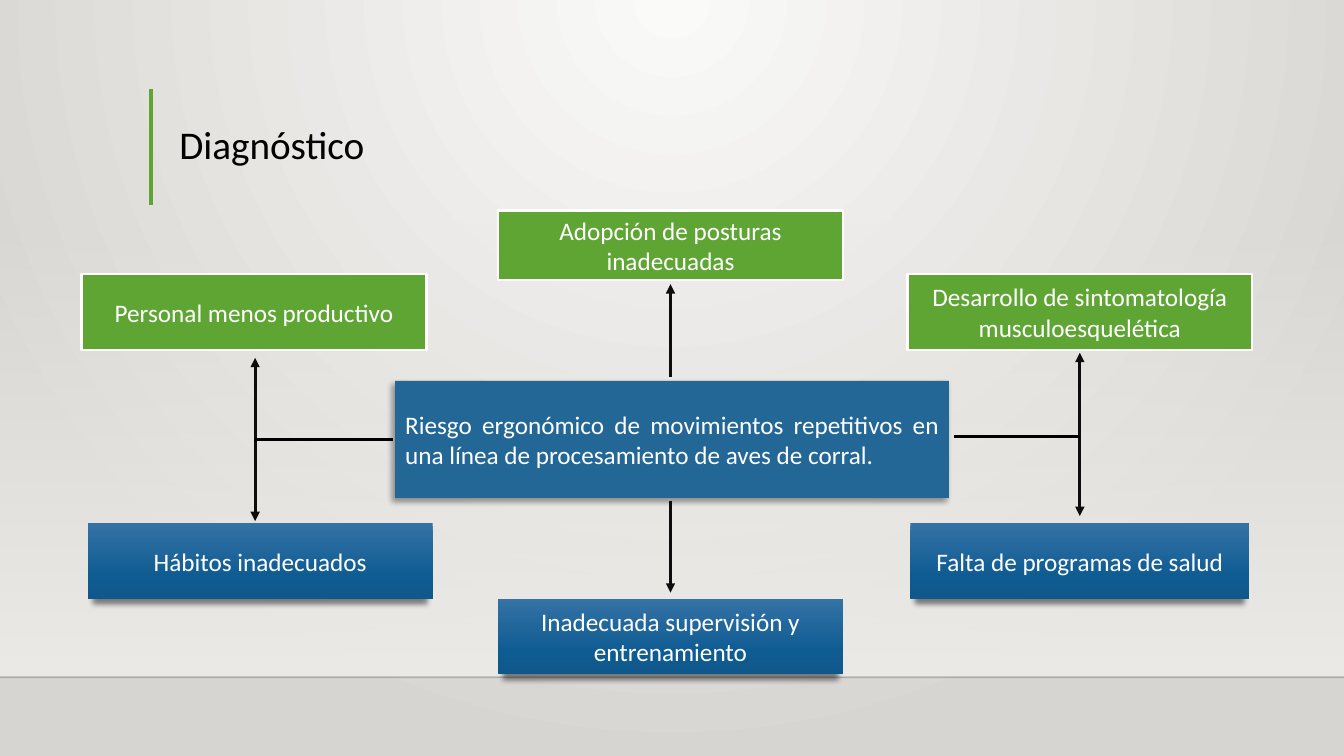
from pptx import Presentation
from pptx.dml.color import RGBColor as RGB
from pptx.enum.shapes import MSO_CONNECTOR as LINK, MSO_SHAPE as SHAPE
from pptx.enum.text import MSO_ANCHOR as ANCHOR, PP_ALIGN as ALIGN
from pptx.oxml import parse_xml
from pptx.oxml.ns import nsdecls, qn
from pptx.util import Inches, Pt

HUE = {"green": "5FA534", "blue": "236797", "white": "FFFFFF", "black": "000000",
       "ink": "0D0D0D", "rule": "000001", "light": "FAFAF9", "edge": "D7D5D2",
       "haze": "EDEBE7", "top": "3572A5", "mid": "0F5C93", "low": "0F588B"}
DOWN = '<a:lin ang="5400000" scaled="0"/>'
GLOW = '<a:path path="circle"><a:fillToRect l="43000" t="0" r="43000" b="100000"/></a:path>'
DEEP = [(0, "top", 100), (69, "mid", 100), (100, "low", 100)]
LEFT, MID, RIGHT = 2.53, 6.65, 10.71


def tint(name, alpha):
    """Return the XML of a colour with the given opacity in percent."""
    return f'<a:srgbClr val="{HUE[name]}"><a:alpha val="{alpha * 1000}"/></a:srgbClr>'


def blend(owner, stops, way):
    """Replace the solid fill of an element with a gradient."""
    marks = "".join(f'<a:gs pos="{pos * 1000}">{tint(name, alpha)}</a:gs>'
                    for pos, name, alpha in stops)
    grad = parse_xml(f'<a:gradFill {nsdecls("a")} rotWithShape="1">'
                     f'<a:gsLst>{marks}</a:gsLst>{way}</a:gradFill>')
    owner.replace(owner.find(qn("a:solidFill")), grad)


def shade(shape, alpha, blur, dist, angle, scale=100):
    """Give a shape an outer shadow."""
    shape.element.spPr.find(qn("a:effectLst")).append(parse_xml(
        f'<a:outerShdw {nsdecls("a")} blurRad="{Pt(blur)}" dist="{Pt(dist)}" '
        f'dir="{angle * 60000}" sx="{scale * 1000}" algn="ctr" rotWithShape="0">'
        f'{tint("black", alpha)}</a:outerShdw>'))


def block(slide, box, fill, edge=None):
    """Draw a flat rectangle in the given box."""
    shape = slide.shapes.add_shape(SHAPE.RECTANGLE, *map(Inches, box))
    shape.fill.solid()
    shape.fill.fore_color.rgb = RGB.from_string(HUE[fill])
    if edge:
        shape.line.color.rgb = RGB.from_string(HUE[edge])
        shape.line.width = Pt(1.75)
    else:
        shape.line.fill.background()
    shape.shadow.inherit = False
    return shape


def write(shape, text, size, hue, align):
    """Set one paragraph, centred vertically, in a shape."""
    frame = shape.text_frame
    frame.word_wrap = True
    frame.vertical_anchor = ANCHOR.MIDDLE
    para = frame.paragraphs[0]
    para.text = text
    para.alignment = align
    para.font.name = "Calibri"
    para.font.size = Pt(size)
    para.font.color.rgb = RGB.from_string(HUE[hue])
    return para


def link(slide, start, end, hue="ink", width=2.25, ends=()):
    """Draw a straight line with optional arrowheads."""
    line = slide.shapes.add_connector(LINK.STRAIGHT, *map(Inches, (*start, *end)))
    line.line.color.rgb = RGB.from_string(HUE[hue])
    line.line.width = Pt(width)
    props = line.element.spPr
    for end in ends:
        props.find(qn("a:ln")).append(
            parse_xml(f'<a:{end} {nsdecls("a")} type="triangle"/>'))
    props.append(parse_xml(f'<a:effectLst {nsdecls("a")}/>'))
    return line


def scene(slide, wide):
    """Paint the backdrop and the floor line."""
    slide.background.fill.solid()
    blend(slide.element.find(".//" + qn("p:bgPr")),
          [(0, "light", 100), (100, "edge", 100)], GLOW)
    haze = block(slide, (0, 2.2, wide, 4.5), "haze")
    blend(haze.element.spPr, [(0, "haze", 0), (100, "haze", 100)], DOWN)
    floor = link(slide, (0, 6.72), (wide, 6.72), "rule", 1)
    color = floor.element.spPr.find(".//" + qn("a:srgbClr"))
    color.append(parse_xml(f'<a:alpha {nsdecls("a")} val="20000"/>'))


def head(slide, box, text):
    """Write the title with a green bar at its left."""
    x, y, _, h = box
    link(slide, (x - 0.18, y), (x - 0.18, y + h), "green", 3)
    title = slide.shapes.add_textbox(*map(Inches, box))
    write(title, text, 28, "black", ALIGN.LEFT).line_spacing = 0.9


def core(slide, box, text):
    """Draw the central problem."""
    shape = block(slide, box, "blue")
    shade(shape, 40, 4, 3, 135)
    write(shape, text, 18, "white", ALIGN.JUSTIFY)


def effect(slide, box, text):
    """Draw a green box with a white edge."""
    write(block(slide, box, "green", "white"), text, 18, "white", ALIGN.CENTER)


def cause(slide, box, text):
    """Draw a shaded blue box."""
    shape = block(slide, box, "mid")
    blend(shape.element.spPr, DEEP, DOWN)
    shade(shape, 48, 4, 4, 90, 97)
    write(shape, text, 18, "white", ALIGN.CENTER)


def links(slide):
    """Join the problem to its effects and causes."""
    both = ("headEnd", "tailEnd")
    for start, end in ((3.74, 2.82), (4.97, 5.88)):
        link(slide, (MID, start), (MID, end), ends=both[1:])
    for x, y, side, bar in ((LEFT, 3.55, 3.9, 4.36), (RIGHT, 3.5, 9.46, 4.33)):
        link(slide, (x, y), (x, y + 1.62), ends=both)
        link(slide, (x, bar), (side, bar), "black")


def main():
    """Build the slide and save it."""
    deck = Presentation()
    deck.slide_width, deck.slide_height = Inches(13.33), Inches(7.5)
    slide = deck.slides.add_slide(deck.slide_layouts[6])
    scene(slide, 13.33)
    head(slide, (1.68, 0.88, 10.41, 1.15), "Diagnóstico")
    core(slide, (3.92, 3.78, 5.49, 1.16),
         "Riesgo ergonómico de movimientos repetitivos en una línea de "
         "procesamiento de aves de corral.")
    effect(slide, (0.81, 2.72, 3.42, 0.75), "Personal menos productivo")
    effect(slide, (4.94, 2.09, 3.42, 0.69), "Adopción de posturas inadecuadas")
    effect(slide, (9, 2.72, 3.42, 0.75), "Desarrollo de sintomatología musculoesquelética")
    cause(slide, (0.87, 5.19, 3.42, 0.75), "Hábitos inadecuados")
    cause(slide, (4.94, 5.94, 3.42, 0.75), "Inadecuada supervisión y entrenamiento")
    cause(slide, (9.03, 5.19, 3.36, 0.75), "Falta de programas de salud")
    links(slide)
    deck.save("out.pptx")


if __name__ == "__main__":
    main()
